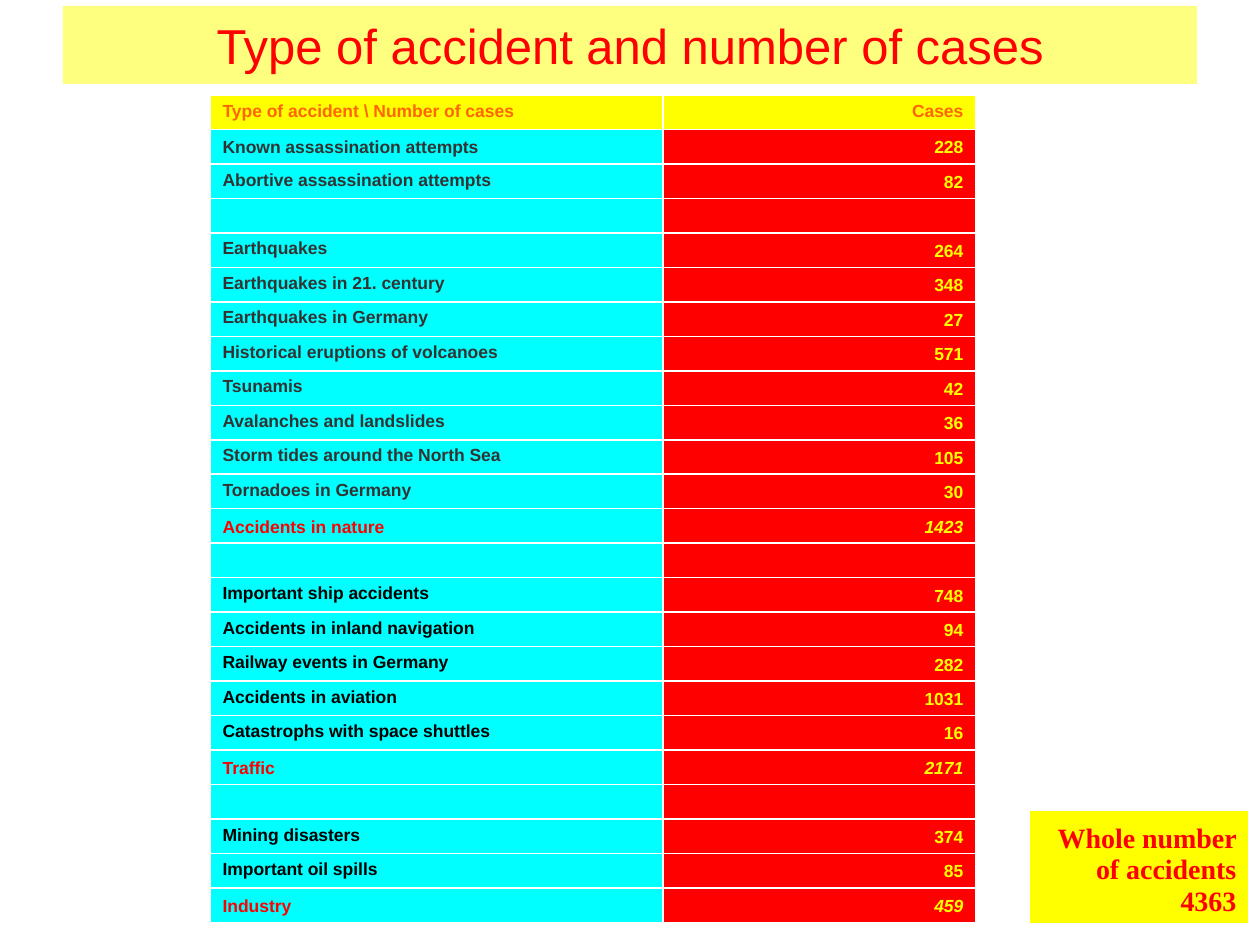
from lxml import etree
from pptx import Presentation
from pptx import util as u
from pptx.dml.color import RGBColor
from pptx.enum import text
from pptx.oxml.ns import qn

TITLE = "Type of accident and number of cases"
HEADER = ("Type of accident \\ Number of cases", "Cases")
TOTAL = "Whole number of accidents 4363"

# Each group: label colour, its rows, its sum row (or None)
GROUPS = [
    ("333333", [("Known assassination attempts", 228),
                ("Abortive assassination attempts", 82)], None),
    ("333333", [("Earthquakes", 264),
                ("Earthquakes in 21. century", 348),
                ("Earthquakes in Germany", 27),
                ("Historical eruptions of volcanoes", 571),
                ("Tsunamis", 42),
                ("Avalanches and landslides", 36),
                ("Storm tides around the North Sea", 105),
                ("Tornadoes in Germany", 30)], ("Accidents in nature", 1423)),
    ("000000", [("Important ship accidents", 748),
                ("Accidents in inland navigation", 94),
                ("Railway events in Germany", 282),
                ("Accidents in aviation", 1031),
                ("Catastrophs with space shuttles", 16)], ("Traffic", 2171)),
    ("000000", [("Mining disasters", 374),
                ("Important oil spills", 85)], ("Industry", 459)),
]

YELLOW, RED, CYAN, ORANGE = "FFFF00", "FF0000", "00FFFF", "FF6600"
TOP, BOTTOM = text.MSO_ANCHOR.TOP, text.MSO_ANCHOR.BOTTOM
LEFT, RIGHT = text.PP_ALIGN.LEFT, text.PP_ALIGN.RIGHT
HANGING = 48


def px(n):
    return u.Emu(round(n * 914400 / 126))


def paint(target, colour):
    target.fill.solid()
    target.fill.fore_color.rgb = RGBColor.from_string(colour)


def add_run(paragraph, words, colour, size, font="Arial", bold=True, italic=False):
    run = paragraph.add_run()
    run.text = words
    run.font.name, run.font.size = font, u.Pt(size)
    run.font.bold, run.font.italic = bold, italic
    run.font.color.rgb = RGBColor.from_string(colour)


def add_grid(slide, left, top, widths, height, row_count):
    """Add an unbanded table with equal rows."""
    frame = slide.shapes.add_table(row_count, len(widths), px(left), px(top),
                                   px(sum(widths)), px(height))
    grid = frame.table
    grid.first_row = grid.horz_banding = False
    for column, width in zip(grid.columns, widths):
        column.width = px(width)
    for row in grid.rows:
        row.height = px(height / row_count)
    return grid


def fill_cell(cell, words, back, colour, align, anchor, size=10, **style):
    paint(cell, back)
    cell.vertical_anchor = anchor
    paragraph = cell.text_frame.paragraphs[0]
    paragraph.alignment = align
    if words:
        properties = paragraph._p.get_or_add_pPr()
        properties.set("marL", str(px(HANGING)))
        properties.set("indent", str(-px(HANGING)))
        add_run(paragraph, words, colour, size, **style)
    else:  # keeps an empty row as low as the others
        etree.SubElement(paragraph._p, qn("a:endParaRPr"), sz=str(size * 100))


def body_rows():
    """List (label, cases, label colour, label anchor, is sum) for each row."""
    rows = []
    for colour, cases, subtotal in GROUPS:
        if rows:
            rows.append(("", "", colour, TOP, False))
        for label, count in cases:
            anchor = TOP if rows else BOTTOM
            rows.append((label, str(count), colour, anchor, False))
        if subtotal:
            rows.append((subtotal[0], str(subtotal[1]), RED, BOTTOM, True))
    return rows


def main():
    deck = Presentation()
    deck.slide_width, deck.slide_height = px(1260), px(945)
    slide = deck.slides.add_slide(deck.slide_layouts[6])

    title = slide.shapes.add_textbox(px(63), px(6), px(1134), px(78))
    paint(title, YELLOW)
    shade = title.fill._xPr.find(qn("a:solidFill"))[0]
    etree.SubElement(shade, qn("a:alpha"), val="50000")
    title.text_frame.word_wrap = True
    title.text_frame.vertical_anchor = text.MSO_ANCHOR.MIDDLE
    heading = title.text_frame.paragraphs[0]
    heading.alignment = text.PP_ALIGN.CENTER
    add_run(heading, TITLE, RED, 28, bold=False)

    rows = body_rows()
    accidents = add_grid(slide, 210, 95, (453, 313), 828, len(rows) + 1)
    for column, (words, align) in enumerate(zip(HEADER, (LEFT, RIGHT))):
        fill_cell(accidents.cell(0, column), words, YELLOW, ORANGE, align, TOP)
    for i, (label, count, colour, anchor, is_sum) in enumerate(rows, 1):
        fill_cell(accidents.cell(i, 0), label, CYAN, colour, LEFT, anchor)
        fill_cell(accidents.cell(i, 1), count, RED, YELLOW, RIGHT, BOTTOM,
                  italic=is_sum)

    total = add_grid(slide, 1029, 810, (220,), 106, 1)
    fill_cell(total.cell(0, 0), TOTAL, YELLOW, RED, RIGHT, BOTTOM, size=16,
              font="Times New Roman")
    deck.save("out.pptx")


if __name__ == "__main__":
    main()
